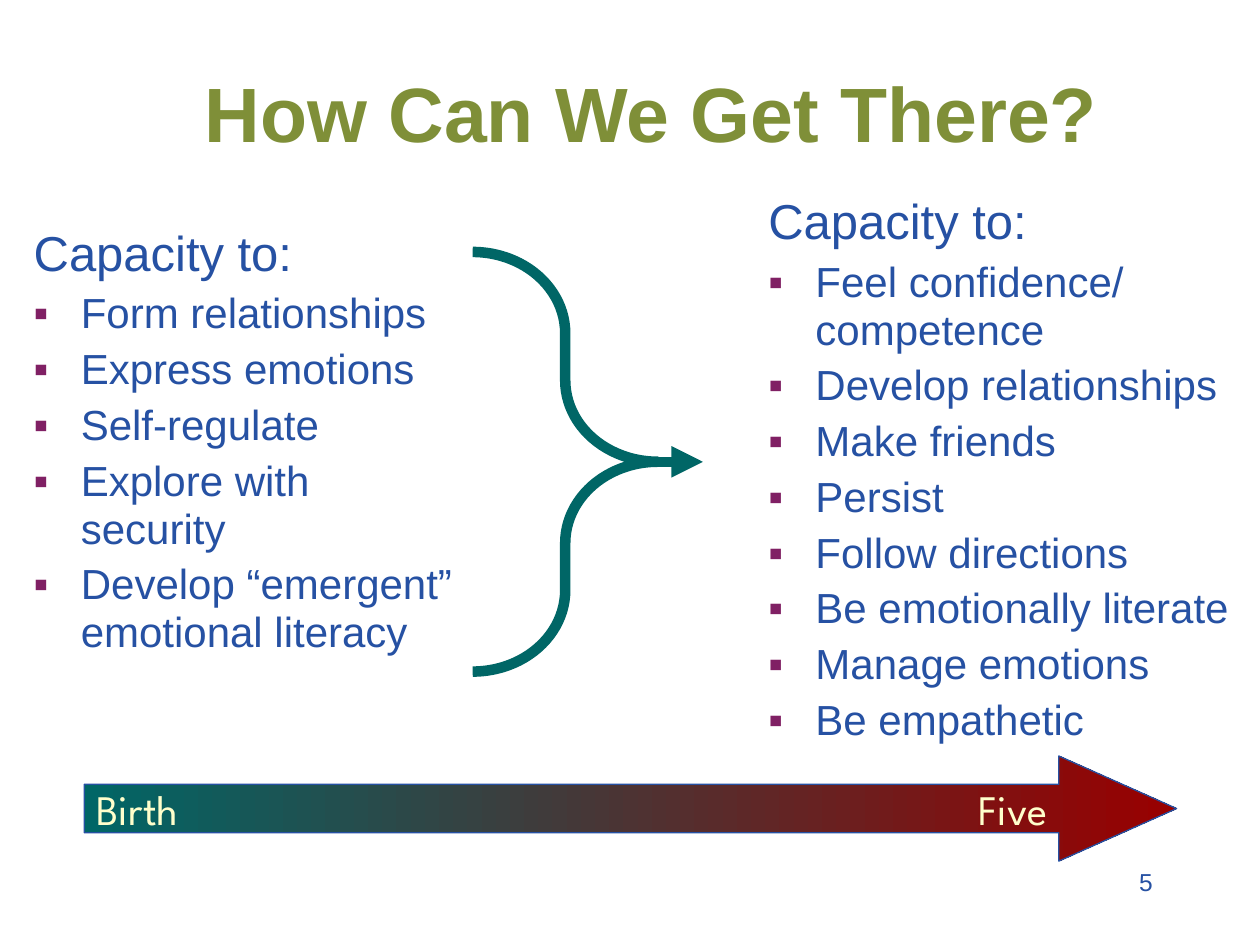
from lxml import etree
from pptx import Presentation
from pptx import util as u
from pptx.dml.color import RGBColor
from pptx.enum import shapes, text
from pptx.oxml.ns import qn

COLORS = {
    "blue": "2651A3",
    "olive": "7F8F38",
    "plum": "802064",
    "teal": "006666",
    "red": "990000",
    "cream": "FFFFCC",
}


def rgb(name):
    return RGBColor.from_string(COLORS[name])


class SlideBuilder:
    font = "Arial"
    indent = u.Cm(0.95)

    def __init__(self, slide):
        self.slide = slide

    def format(self, p, size, color, font=None, bold=False):
        for r in p.runs:
            r.font.size = u.Pt(size)
            r.font.name = font or self.font
            r.font.bold = bold
            r.font.color.rgb = rgb(color)

    def frame(self, box):
        sp = self.slide.shapes.add_textbox(*map(u.Cm, box))
        tf = sp.text_frame
        tf.word_wrap = True
        return tf

    def label(self, words, box, size, color, align=text.PP_ALIGN.LEFT, font=None, bold=False):
        p = self.frame(box).paragraphs[0]
        p.text = words
        p.alignment = align
        self.format(p, size, color, font, bold)

    def bullet(self, p):
        pPr = p._p.get_or_add_pPr()
        pPr.set("marL", str(self.indent))
        pPr.set("indent", str(-self.indent))
        buClr = etree.SubElement(pPr, qn("a:buClr"))
        etree.SubElement(buClr, qn("a:srgbClr")).set("val", COLORS["plum"])
        etree.SubElement(pPr, qn("a:buFont")).set("typeface", self.font)
        etree.SubElement(pPr, qn("a:buChar")).set("char", "▪")

    def bullets(self, heading, items, box):
        tf = self.frame(box)
        p = tf.paragraphs[0]
        p.text = heading
        p.line_spacing = 0.95
        self.format(p, 28, "blue")
        for item in items:
            p = tf.add_paragraph()
            p.text = item
            p.line_spacing = 0.95
            p.space_before = u.Pt(4.5)
            self.bullet(p)
            self.format(p, 24, "blue")

    def shape(self, kind, box, adjustments, color, width):
        sp = self.slide.shapes.add_shape(kind, *map(u.Cm, box))
        sp.shadow.inherit = False
        for i, value in enumerate(adjustments):
            sp.adjustments[i] = value
        sp.fill.background()
        sp.line.color.rgb = rgb(color)
        sp.line.width = u.Pt(width)
        return sp

    def gradient(self, sp, start, end):
        sp.fill.gradient()
        sp.fill.gradient_angle = 0
        for stop, color, position in zip(sp.fill.gradient_stops, (start, end), (0, 1)):
            stop.color.rgb = rgb(color)
            stop.position = position

    def arrow(self, x1, y1, x2, y2, color, width):
        line = self.slide.shapes.add_connector(
            shapes.MSO_CONNECTOR.STRAIGHT, *map(u.Cm, (x1, y1, x2, y2)))
        line.line.color.rgb = rgb(color)
        line.line.width = u.Pt(width)
        etree.SubElement(line.line._get_or_add_ln(), qn("a:tailEnd")).set("type", "triangle")
        etree.SubElement(line._element.spPr, qn("a:effectLst"))


def main():
    prs = Presentation()
    prs.slide_width, prs.slide_height = u.Cm(25.4), u.Cm(19.05)
    s = SlideBuilder(prs.slides.add_slide(prs.slide_layouts[6]))

    s.label("5", (18.21, 17.35, 5.28, 1.27), 14, "blue", text.PP_ALIGN.RIGHT)
    s.bullets("Capacity to:", [
        "Form relationships",
        "Express emotions",
        "Self-regulate",
        "Explore with security",
        "Develop “emergent” emotional literacy",
    ], (0.43, 4.45, 9.09, 11.43))
    s.bullets("Capacity to:", [
        "Feel confidence/ competence",
        "Develop relationships",
        "Make friends",
        "Persist",
        "Follow directions",
        "Be emotionally literate",
        "Manage emotions",
        "Be empathetic",
    ], (15.24, 3.81, 10.59, 11.43))

    s.shape(shapes.MSO_SHAPE.RIGHT_BRACE, (9.53, 5.08, 3.73, 8.46), (0.44, 0.5), "teal", 6)
    s.arrow(12.78, 9.31, 14.17, 9.31, "teal", 6)

    timeline = s.shape(shapes.MSO_SHAPE.RIGHT_ARROW, (1.7, 15.24, 22.02, 2.12),
                       (0.46, 1.12), "blue", 0.75)
    s.gradient(timeline, "teal", "red")
    for age, left in (("Birth", 1.7), ("Five", 19.48)):
        s.label(age, (left, 15.67, 4.24, 1.27), 24, "cream", font="League Spartan")

    s.label("How Can We Get There?", (2.34, 1.2, 21.59, 3.18), 44, "olive",
            text.PP_ALIGN.CENTER, bold=True)
    prs.save("out.pptx")


if __name__ == "__main__":
    main()
